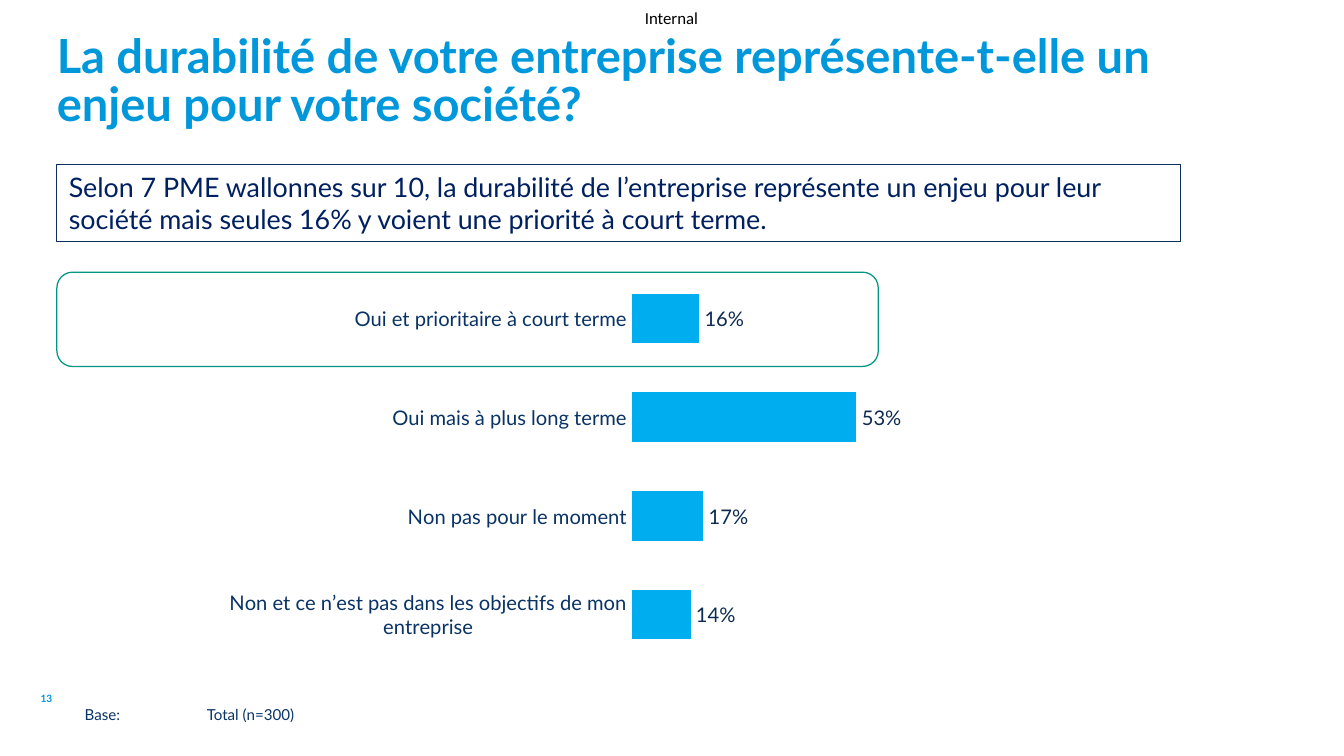
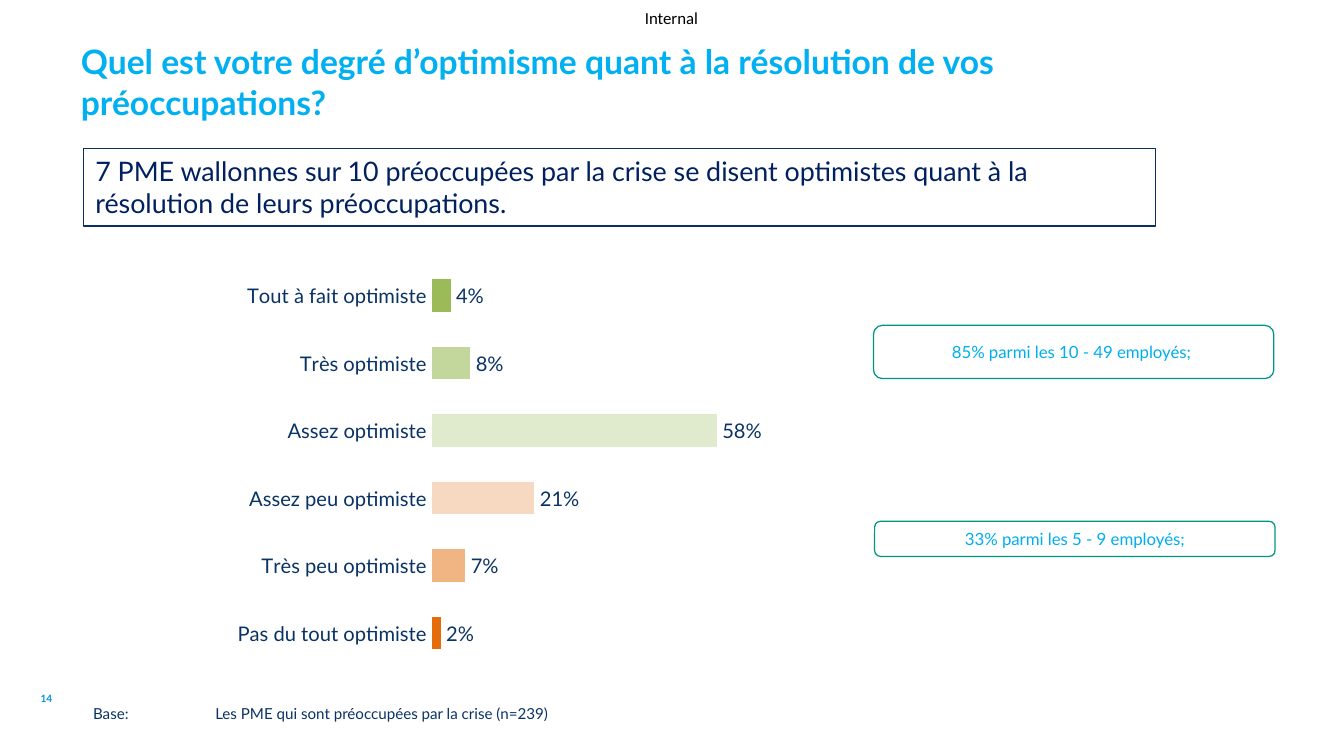
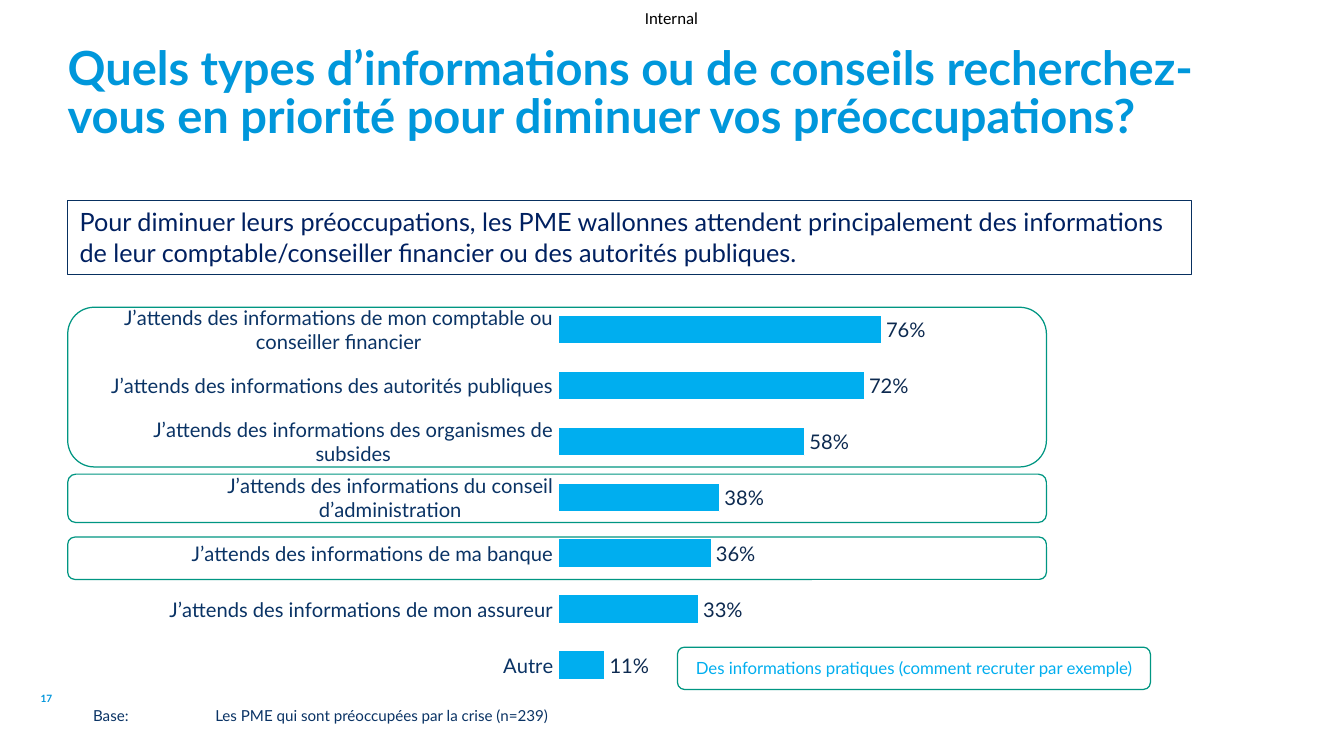
"""Build three survey slides with a headline, a key finding and a bar chart."""
from lxml import etree
from pptx import Presentation
from pptx.chart.data import CategoryChartData
from pptx.dml.color import RGBColor
from pptx.enum.chart import XL_CHART_TYPE, XL_LABEL_POSITION, XL_TICK_MARK
from pptx.enum.shapes import MSO_SHAPE
from pptx.enum.text import MSO_ANCHOR, PP_ALIGN
from pptx.oxml.ns import qn
from pptx.util import Inches, Pt

BAR_CLUSTERED = XL_CHART_TYPE.BAR_CLUSTERED
OUTSIDE_END = XL_LABEL_POSITION.OUTSIDE_END
NO_TICK = XL_TICK_MARK.NONE
RECTANGLE = MSO_SHAPE.RECTANGLE
ROUNDED = MSO_SHAPE.ROUNDED_RECTANGLE
TOP, MIDDLE = MSO_ANCHOR.TOP, MSO_ANCHOR.MIDDLE
LEFT, CENTER = PP_ALIGN.LEFT, PP_ALIGN.CENTER

BLACK = RGBColor(0x00, 0x00, 0x00)
WHITE = RGBColor(0xFF, 0xFF, 0xFF)
TITLE_BLUE = RGBColor(0x00, 0x97, 0xDB)
BRIGHT_BLUE = RGBColor(0x00, 0xB0, 0xF0)
NUMBER_BLUE = RGBColor(0x00, 0x96, 0xDC)
BAR_BLUE = RGBColor(0x00, 0xAE, 0xEF)
FINDING_NAVY = RGBColor(0x00, 0x20, 0x60)
FRAME_NAVY = RGBColor(0x08, 0x30, 0x60)
LABEL_NAVY = RGBColor(0x0A, 0x33, 0x65)
VALUE_NAVY = RGBColor(0x0D, 0x2A, 0x50)
TEAL = RGBColor(0x00, 0x96, 0x82)
GREEN = RGBColor(0x9B, 0xBB, 0x59)
LIGHT_GREEN = RGBColor(0xC3, 0xD6, 0x9B)
LIGHT_ORANGE = RGBColor(0xF1, 0xB5, 0x84)
ORANGE = RGBColor(0xE4, 0x6C, 0x0A)

FONT = "Lato"
BASE_CRISIS = "Les PME qui sont préoccupées par la crise (n=239)"

SLIDES = [
    {
        "number": "13",
        "title": "La durabilité de votre entreprise représente-t-elle un enjeu pour votre société?",
        "title_box": (0.47, 0.29, 9.53, 0.8),
        "title_style": (28, TITLE_BLUE, 0, 0.85),
        "finding": "Selon 7 PME wallonnes sur 10, la durabilité de l’entreprise représente un enjeu "
                   "pour leur société mais seules 16% y voient une priorité à court terme.",
        "finding_box": (0.47, 1.36, 9.29, 0.64),
        "finding_size": 16,
        "chart_box": (1.34, 1.85, 7.78, 3.64),
        "plot": (0.499, 0.103, 0.452, 0.897),
        "gap": 95,
        "value_color": VALUE_NAVY,
        "bars": [
            ("Oui et prioritaire à court terme", 16),
            ("Oui mais à plus long terme", 53),
            ("Non pas pour le moment", 17),
            ("Non et ce n’est pas dans les objectifs de mon entreprise", 14),
        ],
        "point_fills": [],
        "base": "Total (n=300)",
        "base_at": (0.7, 5.87),
        "callouts": [((0.47, 2.25, 6.79, 0.78), "")],
    },
    {
        "number": "14",
        "title": "Quel est votre degré d’optimisme quant à la résolution de vos préoccupations?",
        "title_box": (0.57, 0.29, 9.27, 0.59),
        "title_style": (20, BRIGHT_BLUE, None, 1.0),
        "finding": "7 PME wallonnes sur 10 préoccupées par la crise se disent optimistes quant à la "
                   "résolution de leurs préoccupations.",
        "finding_box": (0.69, 1.23, 8.86, 0.64),
        "finding_size": 16,
        "chart_box": (0.69, 1.8, 7.84, 3.73),
        "plot": (0.367, 0.098, 0.52, 0.898),
        "gap": 100,
        "value_color": LABEL_NAVY,
        "bars": [
            ("Tout à fait optimiste", 4),
            ("Très optimiste", 8),
            ("Assez optimiste", 58),
            ("Assez peu optimiste", 21),
            ("Très peu optimiste", 7),
            ("Pas du tout optimiste", 2),
        ],
        "point_fills": [(GREEN, 100), (LIGHT_GREEN, 100), (LIGHT_GREEN, 50),
                        (LIGHT_ORANGE, 50), (ORANGE, 50), (ORANGE, 100)],
        "base": BASE_CRISIS,
        "base_at": (0.77, 5.86),
        "callouts": [
            ((7.22, 2.69, 3.31, 0.44), "85% parmi les 10 - 49 employés; "),
            ((7.23, 4.31, 3.31, 0.29), "33% parmi les 5 - 9 employés;"),
        ],
    },
    {
        "number": "17",
        "title": "Quels types d’informations ou de conseils recherchez-vous en priorité pour "
                 "diminuer vos préoccupations?",
        "title_box": (0.56, 0.39, 9.53, 0.59),
        "title_style": (28, TITLE_BLUE, 0, 0.85),
        "finding": "Pour diminuer leurs préoccupations, les PME wallonnes attendent principalement des "
                   "informations de leur comptable/conseiller financier ou des autorités publiques.",
        "finding_box": (0.56, 1.66, 9.29, 0.61),
        "finding_size": 15,
        "chart_box": (0.77, 2.38, 7.78, 3.35),
        "plot": (0.494, 0.034, 0.452, 0.966),
        "gap": 95,
        "value_color": VALUE_NAVY,
        "bars": [
            ("J’attends des informations de mon comptable ou conseiller financier", 76),
            ("J’attends des informations des autorités publiques", 72),
            ("J’attends des informations des organismes de subsides", 58),
            ("J’attends des informations du conseil d’administration", 38),
            ("J’attends des informations de ma banque", 36),
            ("J’attends des informations de mon assureur", 33),
            ("Autre", 11),
        ],
        "point_fills": [],
        "base": BASE_CRISIS,
        "base_at": (0.77, 5.88),
        "callouts": [
            ((5.6, 5.35, 3.91, 0.35), "Des informations pratiques (comment recruter par exemple)"),
            ((0.56, 2.54, 8.09, 1.32), ""),
            ((0.56, 3.92, 8.09, 0.4), ""),
            ((0.56, 4.44, 8.09, 0.35), ""),
        ],
    },
]


def write(shape, text, size, color, bold=False, align=LEFT, anchor=TOP, margin=None, font=FONT):
    """Put one run of text in a shape and return its paragraph."""
    frame = shape.text_frame
    frame.word_wrap = True
    frame.vertical_anchor = anchor
    if margin is not None:
        frame.margin_left = frame.margin_top = frame.margin_right = frame.margin_bottom = Inches(margin)
    paragraph = frame.paragraphs[0]
    paragraph.alignment = align
    run = paragraph.add_run()
    run.text = text
    run.font.name = font
    run.font.size = Pt(size)
    run.font.bold = bold
    run.font.color.rgb = color
    return paragraph


def add_frame(slide, preset, box, color):
    """Add an unfilled outline shape."""
    shape = slide.shapes.add_shape(preset, *map(Inches, box))
    shape.shadow.inherit = False
    shape.fill.background()
    shape.line.color.rgb = color
    shape.line.width = Pt(0.75)
    return shape


presentation = Presentation()
presentation.slide_width = Inches(11.11)
presentation.slide_height = Inches(6.25)
blank_layout = presentation.slide_layouts[6]

for content in SLIDES:
    slide = presentation.slides.add_slide(blank_layout)

    marking = slide.shapes.add_textbox(Inches(5.18), Inches(0), Inches(0.74), Inches(0.29))
    write(marking, "Internal", 10, BLACK, align=CENTER, anchor=MIDDLE, margin=0, font="Calibri")
    number = slide.shapes.add_textbox(Inches(0), Inches(5.61), Inches(0.77), Inches(0.33))
    write(number, content["number"], 6, NUMBER_BLUE, bold=True, align=CENTER, anchor=MIDDLE)

    chart_data = CategoryChartData(number_format="General")
    chart_data.categories = [label for label, value in content["bars"]]
    chart_data.add_series("Series 1", [value for label, value in content["bars"]])
    chart = slide.shapes.add_chart(BAR_CLUSTERED, *map(Inches, content["chart_box"]), chart_data).chart
    chart.has_legend = False
    chart.has_title = False
    chart.font.name = FONT
    chart.font.size = Pt(12)
    chart.font.color.rgb = VALUE_NAVY

    category_axis = chart.category_axis
    category_axis.reverse_order = True
    category_axis.major_tick_mark = NO_TICK
    category_axis.format.line.fill.background()
    category_axis.tick_labels.font.name = FONT
    category_axis.tick_labels.font.size = Pt(12)
    category_axis.tick_labels.font.color.rgb = LABEL_NAVY
    value_axis = chart.value_axis
    value_axis.minimum_scale = 0
    value_axis.maximum_scale = 100
    value_axis.has_major_gridlines = False
    value_axis.visible = False

    plot = chart.plots[0]
    plot.gap_width = content["gap"]
    plot.vary_by_categories = False
    series = plot.series[0]
    series.format.fill.solid()
    series.format.fill.fore_color.rgb = BAR_BLUE
    series.format.line.color.rgb = WHITE
    series.format.line.width = Pt(0.75)
    for index, (color, opacity) in enumerate(content["point_fills"]):
        point_format = series.points[index].format
        point_format.fill.solid()
        point_format.fill.fore_color.rgb = color
        point_format.line.color.rgb = WHITE
        point_format.line.width = Pt(0.75)
        if opacity < 100:
            fill_color = point_format.fill._xPr.find(qn("a:solidFill"))[0]
            etree.SubElement(fill_color, qn("a:alpha"), val=str(opacity * 1000))

    labels = series.data_labels
    labels.show_value = True
    labels.position = OUTSIDE_END
    labels.number_format = r"0\%"
    labels.number_format_is_linked = False
    labels.font.name = FONT
    labels.font.size = Pt(12)
    labels.font.color.rgb = content["value_color"]

    plot_area = chart._chartSpace.chart.plotArea
    for old_layout in plot_area.findall(qn("c:layout")):
        plot_area.remove(old_layout)
    layout = etree.Element(qn("c:layout"))
    plot_area.insert(0, layout)
    manual_layout = etree.SubElement(layout, qn("c:manualLayout"))
    settings = [("layoutTarget", "inner"), ("xMode", "edge"), ("yMode", "edge")]
    settings += zip("xywh", content["plot"])
    for tag, value in settings:
        etree.SubElement(manual_layout, qn("c:" + tag), val=str(value))

    finding = add_frame(slide, RECTANGLE, content["finding_box"], FRAME_NAVY)
    write(finding, content["finding"], content["finding_size"], FINDING_NAVY)

    size, color, margin, spacing = content["title_style"]
    title = slide.shapes.add_textbox(*map(Inches, content["title_box"]))
    paragraph = write(title, content["title"], size, color, bold=True, margin=margin)
    paragraph.line_spacing = spacing

    left, top = content["base_at"]
    base = slide.shapes.add_textbox(Inches(left), Inches(top), Inches(9.06), Inches(0.17))
    paragraph = write(base, "Base:\t" + content["base"], 9, LABEL_NAVY, margin=0)
    paragraph.line_spacing = Pt(8)
    tab_list = etree.SubElement(paragraph._p.get_or_add_pPr(), qn("a:tabLst"))
    etree.SubElement(tab_list, qn("a:tab"), pos=str(Inches(1.01)), algn="l")

    for box, text in content["callouts"]:
        callout = add_frame(slide, ROUNDED, box, TEAL)
        if text:
            write(callout, text, 10, BAR_BLUE, align=CENTER, anchor=MIDDLE)

presentation.save("out.pptx")
